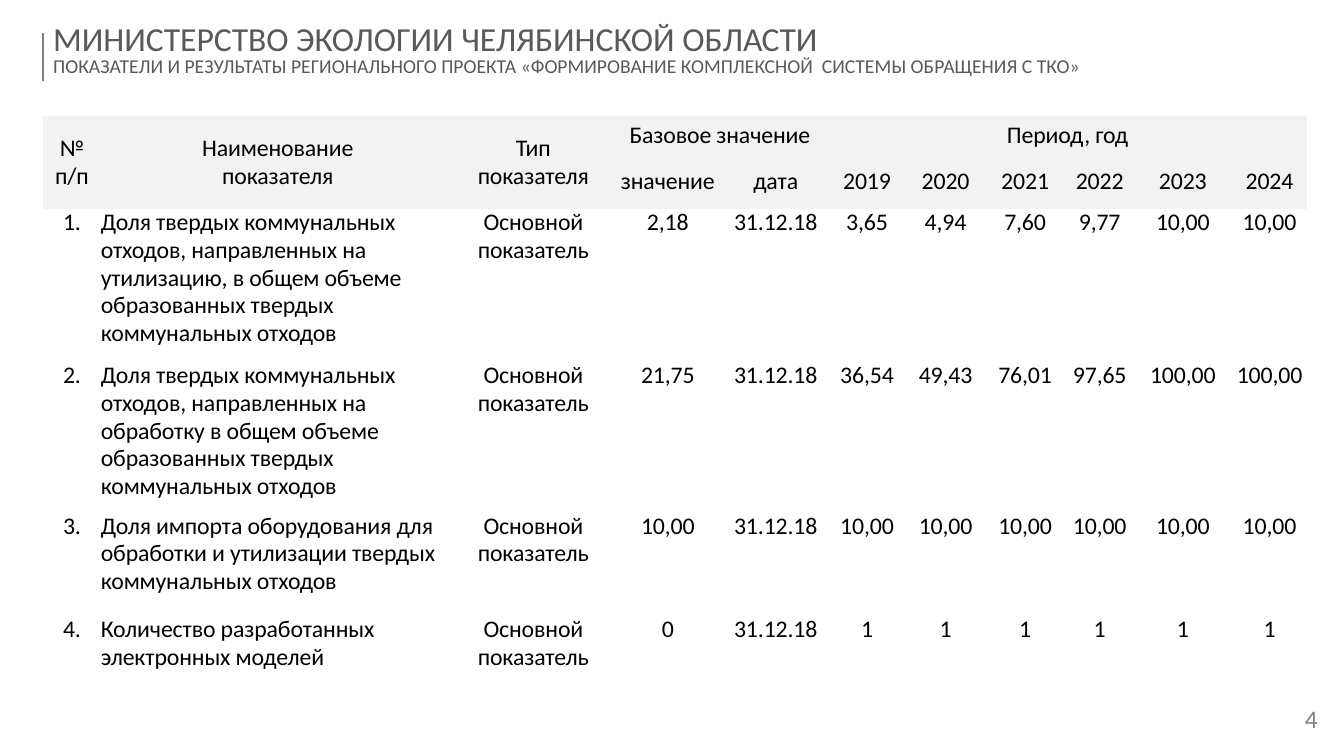
"""Build the slide with the indicators of the regional waste management project."""
from lxml import etree
from pptx import Presentation
from pptx.dml.color import RGBColor
from pptx.enum.shapes import MSO_CONNECTOR
from pptx.enum.text import MSO_ANCHOR, PP_ALIGN
from pptx.oxml.ns import qn
from pptx.util import Cm, Pt

LEFT, CENTER = PP_ALIGN.LEFT, PP_ALIGN.CENTER
TOP, MIDDLE = MSO_ANCHOR.TOP, MSO_ANCHOR.MIDDLE
STRAIGHT = MSO_CONNECTOR.STRAIGHT
COLORS = {"rule": "808080", "title": "595959", "text": "000000", "header": "F2F2F2"}
NO_STYLE = "{2D5ABB26-0587-4C30-8999-92F81FD0307C}"
MARGINS = ("margin_left", "margin_top", "margin_right", "margin_bottom")


def write(frame, lines, sizes, color, alignment, spacing):
    """Fill a text frame with one paragraph per line."""
    frame.word_wrap = True
    for index, (line, size) in enumerate(zip(lines, sizes)):
        paragraph = frame.add_paragraph() if index else frame.paragraphs[0]
        paragraph.alignment = alignment
        paragraph.line_spacing = spacing
        run = paragraph.add_run()
        run.text = line
        for name, value in {"name": "Calibri", "size": Pt(size)}.items():
            setattr(run.font, name, value)
        run.font.color.rgb = RGBColor.from_string(COLORS[color])


presentation = Presentation()
presentation.slide_width, presentation.slide_height = Cm(33.87), Cm(19.05)
slide = presentation.slides.add_slide(presentation.slide_layouts[6])

rule = slide.shapes.add_connector(STRAIGHT, Cm(1.09), Cm(0.84), Cm(1.09), Cm(2.03))
rule.line.color.rgb = RGBColor.from_string(COLORS["rule"])
rule.line.width = Pt(1.5)
etree.SubElement(rule.element.spPr, qn("a:effectLst"))

number = slide.shapes.add_textbox(Cm(31.57), Cm(17.53), Cm(2.95), Cm(1.27))
number.text_frame.vertical_anchor = MIDDLE
write(number.text_frame, ["4"], [18], "rule", CENTER, 0.8)

title = slide.shapes.add_textbox(Cm(1.09), Cm(0.66), Cm(30.96), Cm(1.5))
title.text_frame.margin_top = title.text_frame.margin_bottom = 0
title_lines = [
    "МИНИСТЕРСТВО ЭКОЛОГИИ ЧЕЛЯБИНСКОЙ ОБЛАСТИ",
    "ПОКАЗАТЕЛИ И РЕЗУЛЬТАТЫ РЕГИОНАЛЬНОГО ПРОЕКТА «ФОРМИРОВАНИЕ КОМПЛЕКСНОЙ  СИСТЕМЫ ОБРАЩЕНИЯ С ТКО»",
]
write(title.text_frame, title_lines, [24, 14], "title", LEFT, 0.8)

column_widths = [1.45, 8.92, 3.96, 2.82, 2.62, 1.98, 1.98, 2.03, 1.73, 2.46, 1.91]
row_heights = [0.97, 1.27, 3.86, 3.78, 2.62, 1.83]
indicators = [
    ("Доля твердых коммунальных отходов, направленных на утилизацию, "
     "в общем объеме образованных твердых коммунальных отходов",
     "2,18", ["3,65", "4,94", "7,60", "9,77", "10,00", "10,00"]),
    ("Доля твердых коммунальных отходов, направленных на обработку "
     "в общем объеме образованных твердых коммунальных отходов",
     "21,75", ["36,54", "49,43", "76,01", "97,65", "100,00", "100,00"]),
    ("Доля импорта оборудования для обработки и утилизации твердых коммунальных отходов",
     "10,00", ["10,00"] * 6),
    ("Количество разработанных электронных моделей", "0", ["1"] * 6),
]
rows = [
    ["№\nп/п", "Наименование\nпоказателя", "Тип\nпоказателя", "Базовое значение", "",
     "Период, год"] + [""] * 5,
    ["", "", "", "значение", "дата"] + [str(year) for year in range(2019, 2025)],
]
for position, (indicator, base, values) in enumerate(indicators, 1):
    rows.append([f"{position}.", indicator, "Основной показатель", base, "31.12.18"] + values)

table = slide.shapes.add_table(
    len(rows), len(column_widths), Cm(1.09), Cm(2.92),
    Cm(sum(column_widths)), Cm(sum(row_heights))).table
table.first_row = table.horz_banding = False
table._tbl.tblPr.find(qn("a:tableStyleId")).text = NO_STYLE
for column, width in zip(table.columns, column_widths):
    column.width = Cm(width)
for row, height in zip(table.rows, row_heights):
    row.height = Cm(height)

for row_index, row in enumerate(rows):
    for column_index, text in enumerate(row):
        cell = table.cell(row_index, column_index)
        for margin in MARGINS:
            setattr(cell, margin, 0)
        is_header = row_index < 2
        cell.vertical_anchor = MIDDLE if is_header else TOP
        if is_header:
            cell.fill.solid()
            cell.fill.fore_color.rgb = RGBColor.from_string(COLORS["header"])
        else:
            cell.fill.background()
        if text:
            alignment = LEFT if column_index == 1 and not is_header else CENTER
            lines = text.split("\n")
            write(cell.text_frame, lines, [17] * len(lines), "text", alignment, 0.95)
            for paragraph in cell.text_frame.paragraphs:
                paragraph.runs[0]._r.get_or_add_rPr().set("spc", "-10")

for column_index in range(3):
    table.cell(0, column_index).merge(table.cell(1, column_index))
table.cell(0, 3).merge(table.cell(0, 4))
table.cell(0, 5).merge(table.cell(0, 10))

presentation.save("out.pptx")
